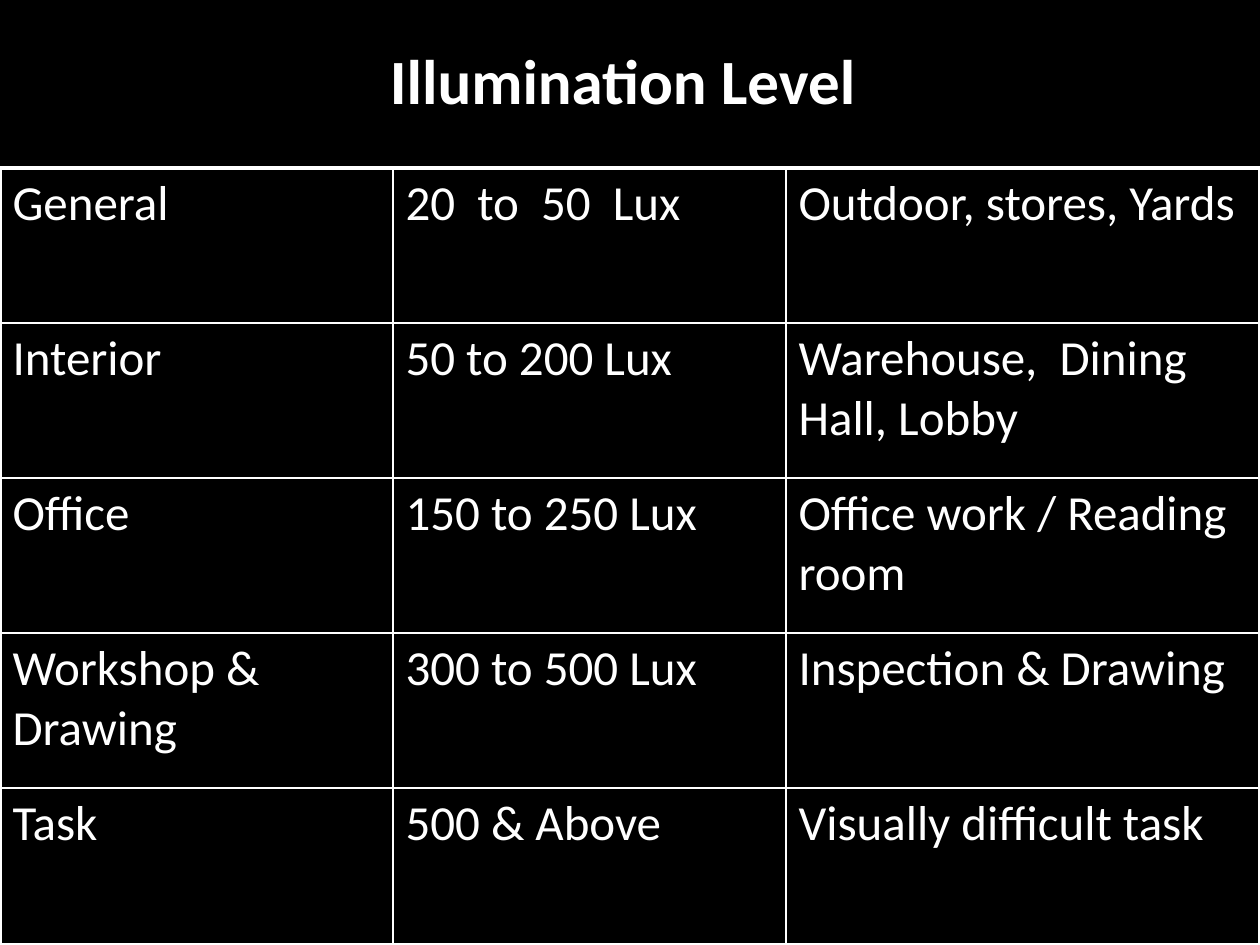
from dataclasses import dataclass

from lxml.etree import SubElement
from pptx import Presentation
from pptx.dml.color import RGBColor
from pptx.enum.text import MSO_ANCHOR, PP_ALIGN
from pptx.oxml.ns import qn
from pptx.util import Emu, Pt

BLACK = RGBColor(0x00, 0x00, 0x00)
WHITE = RGBColor(0xFF, 0xFF, 0xFF)
FONT = "Calibri"
EMU_PER_PX = 914400 / 126
WIDTH, HEIGHT = 1260, 945
TITLE_HEIGHT = 158
TABLE_TOP = 168
COL_WIDTHS = (393, 393, 474)
ROW_HEIGHTS = (155, 155, 155, 155, 157)
OUTER, INNER = 2.25, 1


@dataclass(frozen=True)
class Level:
    area: str
    lux: str
    use: str


LEVELS = (
    Level("General", "20  to  50  Lux", "Outdoor, stores, Yards"),
    Level("Interior", "50 to 200 Lux", "Warehouse,  Dining Hall, Lobby"),
    Level("Office", "150 to 250 Lux", "Office work / Reading room"),
    Level("Workshop & Drawing", "300 to 500 Lux", "Inspection & Drawing"),
    Level("Task", "500 & Above", "Visually difficult task"),
)


def px(n: int) -> Emu:
    return Emu(round(n * EMU_PER_PX))


def write(tf, text: str, *, size: int, bold: bool = False,
          align=PP_ALIGN.LEFT, before_pct: int = 0) -> None:
    p = tf.paragraphs[0]
    p.alignment = align
    if before_pct:
        spacing = SubElement(p._p.get_or_add_pPr(), qn("a:spcBef"))
        SubElement(spacing, qn("a:spcPct"), val=str(before_pct * 1000))
    r = p.add_run()
    r.text = text
    r.font.name = FONT
    r.font.size = Pt(size)
    r.font.bold = bold
    r.font.color.rgb = WHITE


def set_borders(cell, widths: dict[str, float]) -> None:
    tcPr = cell._tc.get_or_add_tcPr()
    for i, (side, width) in enumerate(widths.items()):
        ln = SubElement(tcPr, qn(f"a:ln{side}"), w=str(Pt(width)))
        fill = SubElement(ln, qn("a:solidFill"))
        SubElement(fill, qn("a:srgbClr"), val=str(WHITE))
        tcPr.insert(i, ln)


def add_title(s, text: str) -> None:
    tf = s.shapes.add_textbox(0, 0, px(WIDTH), px(TITLE_HEIGHT)).text_frame
    tf.word_wrap = True
    tf.vertical_anchor = MSO_ANCHOR.MIDDLE
    write(tf, text, size=36, bold=True, align=PP_ALIGN.CENTER)


def add_levels(s, levels: tuple[Level, ...]) -> None:
    rows, cols = len(levels), len(COL_WIDTHS)
    table = s.shapes.add_table(rows, cols, 0, px(TABLE_TOP),
                               px(WIDTH), px(sum(ROW_HEIGHTS))).table
    table.first_row = False
    table.horz_banding = False
    for col, width in zip(table.columns, COL_WIDTHS):
        col.width = px(width)
    for i, (level, height) in enumerate(zip(levels, ROW_HEIGHTS)):
        table.rows[i].height = px(height)
        for j, text in enumerate((level.area, level.lux, level.use)):
            cell = table.cell(i, j)
            cell.fill.background()
            write(cell.text_frame, text, size=28, before_pct=20)
            set_borders(cell, {
                "L": OUTER if j == 0 else INNER,
                "R": OUTER if j == cols - 1 else INNER,
                "T": OUTER if i == 0 else INNER,
                "B": OUTER if i == rows - 1 else INNER,
            })


def main() -> None:
    prs = Presentation()
    prs.slide_width, prs.slide_height = px(WIDTH), px(HEIGHT)
    s = prs.slides.add_slide(prs.slide_layouts[6])
    s.background.fill.solid()
    s.background.fill.fore_color.rgb = BLACK
    add_title(s, "Illumination Level ")
    add_levels(s, LEVELS)
    prs.save("out.pptx")


if __name__ == "__main__":
    main()
